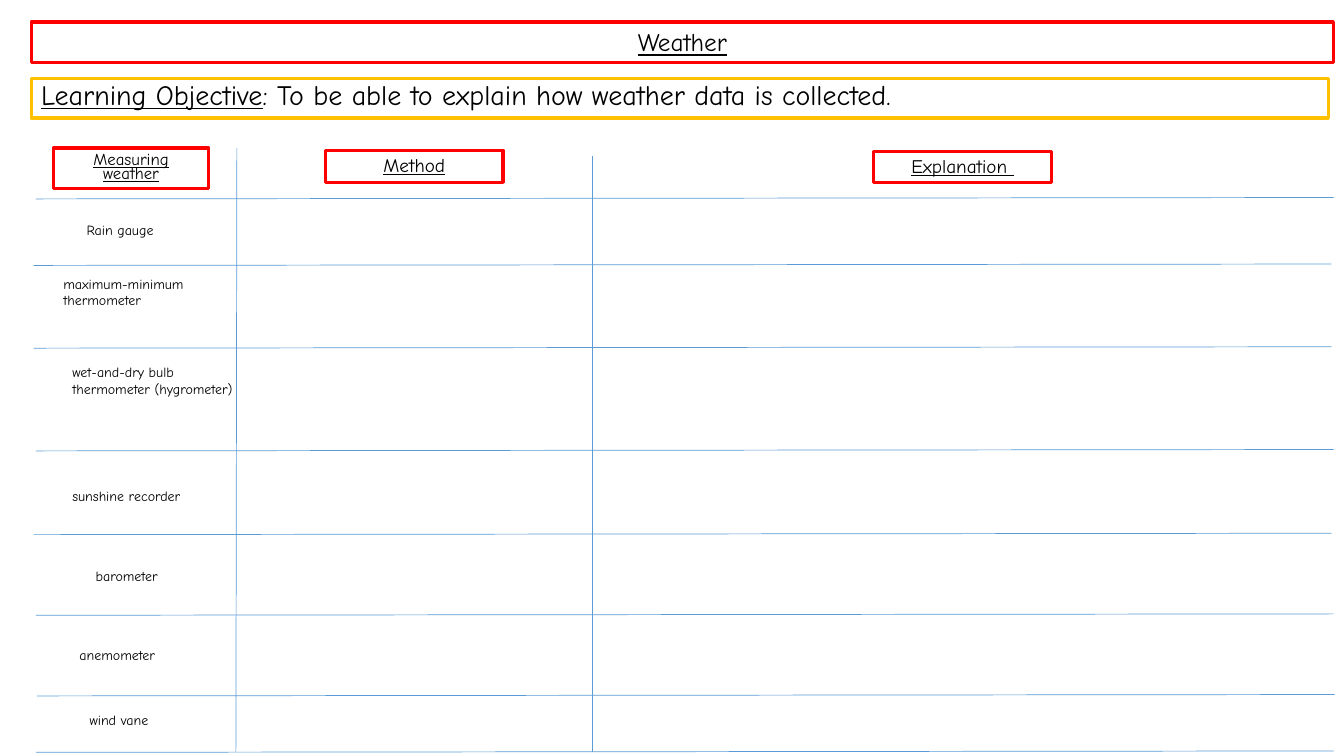
from pptx import Presentation
from pptx.dml.color import RGBColor as RGB
from pptx.enum.shapes import MSO_CONNECTOR as Link, MSO_SHAPE as Kind
from pptx.enum.text import MSO_ANCHOR as Anchor, MSO_AUTO_SIZE as Fit, PP_ALIGN as Align
from pptx.oxml.ns import qn
from pptx.util import Pt
from lxml.etree import SubElement

THEME = {
    "font": "Comic Neue",
    "ink": RGB(0, 0, 0),
    "red": RGB(255, 0, 0),
    "gold": RGB(255, 192, 0),
    "blue": RGB(91, 155, 213),
    "frame": 2.25,
    "rule": 0.5,
    "title": 18,
    "goal": 20,
    "small": 12,
    "head": 13.7,
    "label": 10,
}

# text, box (left, top, width, height), size, line spacing, anchor
HEADS = [
    ("Weather", (22.3, 15.8, 930.2, 28.8), "title", 0.9, Anchor.BOTTOM),
    ("Measuring weather", (38.2, 105.8, 110.9, 28.8), "small", 0.7, Anchor.MIDDLE),
    ("Method", (232.6, 107.3, 126.7, 23), "head", 0.9, Anchor.MIDDLE),
    ("Explanation ", (624.2, 108, 126.7, 22.3), "head", 0.9, Anchor.MIDDLE),
]
GOAL = ("Learning Objective", ": To be able to explain how weather data is collected.")
GOAL_BOX = (22.3, 56.2, 926.6, 28.1)

# lines, box, wrap
TOOLS = [
    (["Rain gauge"], (54.7, 154.8, 64.1, 19.4), False),
    (["maximum-minimum", "thermometer"], (38.2, 193, 130.3, 31.7), True),
    (["wet-and-dry bulb", "thermometer (hygrometer)"], (44.6, 256.3, 137.5, 43.9), True),
    (["sunshine recorder"], (44.6, 344.9, 105.8, 19.4), True),
    (["barometer"], (61.2, 401.8, 64.1, 19.4), False),
    (["anemometer"], (49.7, 457.9, 72, 19.4), False),
    (["wind vane"], (56.9, 504.7, 59.8, 19.4), False),
]

# right end of each row rule, which falls slightly to the left
ROWS = [(952.6, 141.1), (951.1, 188.6), (951.1, 247.7), (952.6, 321.1),
        (951.1, 380.9), (952.6, 438.5), (953.3, 496.1), (952.6, 536.4)]
SPAN, DROP = 927, 1
COLS = [(169.2, 105.8, 168.5, 537.1), (423.4, 111.6, 423.4, 537.1)]

deck = Presentation()
deck.slide_width, deck.slide_height = Pt(960), Pt(540)
slide = deck.slides.add_slide(deck.slide_layouts[6])
shapes = slide.shapes


def style(para, size):
    font = para.font
    font.name, font.size = THEME["font"], Pt(THEME[size])
    font.color.rgb = THEME["ink"]


def frame(box, color, anchor):
    """Add an outlined rectangle and return its text frame."""
    rect = shapes.add_shape(Kind.RECTANGLE, *map(Pt, box))
    rect.shadow.inherit = False
    rect.fill.background()
    rect.line.color.rgb = THEME[color]
    rect.line.width = Pt(THEME["frame"])
    rect.text_frame.word_wrap = True
    rect.text_frame.vertical_anchor = anchor
    return rect.text_frame


def rule(*ends):
    line = shapes.add_connector(Link.STRAIGHT, *map(Pt, ends))
    line.line.color.rgb = THEME["blue"]
    line.line.width = Pt(THEME["rule"])
    SubElement(line._element.spPr, qn("a:effectLst"))


for text, box, size, gap, anchor in HEADS:
    para = frame(box, "red", anchor).paragraphs[0]
    para.text = text
    para.alignment, para.line_spacing = Align.CENTER, gap
    style(para, size)
    para.font.underline = True

para = frame(GOAL_BOX, "gold", Anchor.TOP).paragraphs[0]
para.alignment, para.line_spacing = Align.LEFT, 0.8
style(para, "goal")
for text, under in zip(GOAL, (True, False)):
    run = para.add_run()
    run.text = text
    run.font.underline = under

for x, y in ROWS:
    rule(x, y, x - SPAN, y + DROP)
for ends in COLS:
    rule(*ends)

for lines, box, wrap in TOOLS:
    body = shapes.add_textbox(*map(Pt, box)).text_frame
    body.word_wrap = wrap
    body.auto_size = Fit.SHAPE_TO_FIT_TEXT
    body.text = "\n".join(lines)
    for para in body.paragraphs:
        style(para, "label")

deck.save("out.pptx")
